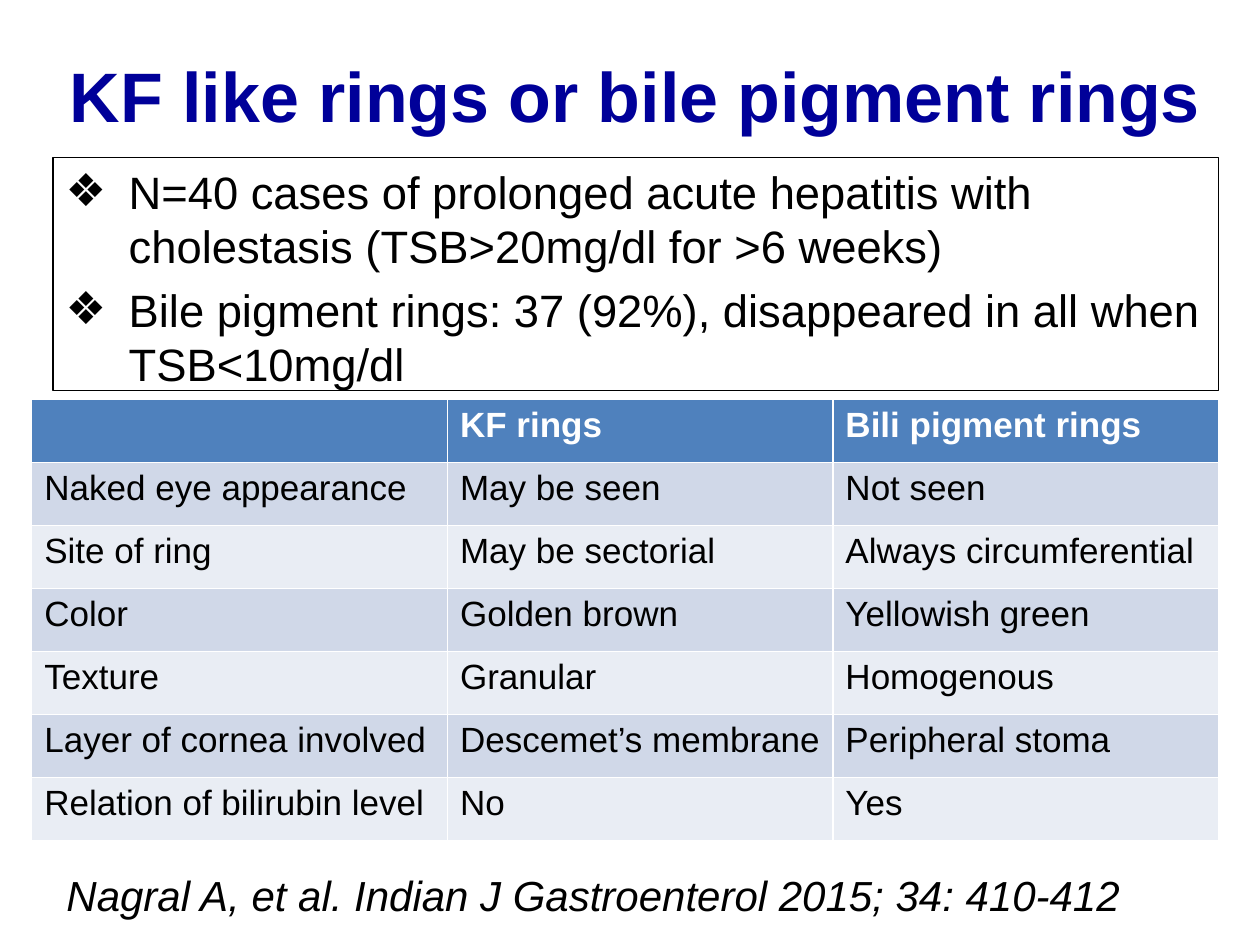
from dataclasses import dataclass

from lxml import etree
from pptx import Presentation, util as u
from pptx.dml.color import RGBColor
from pptx.enum import text as t
from pptx.oxml.ns import qn

FONT = "Arial"
BLACK, WHITE, NAVY = "000000", "FFFFFF", "000099"
HEADER_FILL, BAND_FILLS = "4F81BD", ("D0D8E8", "E9EDF4")


@dataclass
class Box:
    left: float
    top: float
    width: float
    height: float

    def lengths(self) -> list:
        return [u.Cm(v) for v in (self.left, self.top, self.width, self.height)]


@dataclass
class Style:
    size: float
    color: str = BLACK
    bold: bool = False
    italic: bool = False


TITLE_BOX = Box(0.84, 0.43, 23.93, 2.97)
FINDINGS_BOX = Box(1.07, 3.18, 23.5, 4.7)
TABLE_BOX = Box(0.64, 8.05, 23.92, 8.89)
CITATION_BOX = Box(1.09, 17.4, 22.43, 1.27)
COLUMN_WIDTHS = (8.38, 7.77, 7.77)

FINDINGS = (
    "N=40 cases of prolonged acute hepatitis with cholestasis (TSB>20mg/dl for >6 weeks)",
    "Bile pigment rings: 37 (92%), disappeared in all when TSB<10mg/dl",
)
COMPARISON = (
    ("", "KF rings", "Bili pigment rings"),
    ("Naked eye appearance", "May be seen", "Not seen"),
    ("Site of ring", "May be sectorial", "Always circumferential"),
    ("Color", "Golden brown", "Yellowish green"),
    ("Texture", "Granular", "Homogenous"),
    ("Layer of cornea involved", "Descemet’s membrane", "Peripheral stoma"),
    ("Relation of bilirubin level", "No", "Yes"),
)


def rgb(value: str) -> RGBColor:
    return RGBColor.from_string(value)


def format_text(frame, style: Style, align=t.PP_ALIGN.LEFT) -> None:
    for paragraph in frame.paragraphs:
        paragraph.alignment = align
        for run in paragraph.runs:
            run.font.name = FONT
            run.font.size = u.Pt(style.size)
            run.font.bold = style.bold
            run.font.italic = style.italic
            run.font.color.rgb = rgb(style.color)


def place(shape, box: Box) -> None:
    shape.left, shape.top, shape.width, shape.height = box.lengths()


def add_bullet(paragraph, symbol: str, indent: float) -> None:
    props = paragraph._p.get_or_add_pPr()
    props.set("marL", str(u.Cm(indent)))
    props.set("indent", str(-u.Cm(indent)))
    etree.SubElement(props, qn("a:buFont"), typeface=FONT)
    etree.SubElement(props, qn("a:buChar"), char=symbol)


def add_comparison(slide) -> None:
    table = slide.shapes.add_table(
        len(COMPARISON), len(COLUMN_WIDTHS), *TABLE_BOX.lengths()).table
    for column, width in zip(table.columns, COLUMN_WIDTHS):
        column.width = u.Cm(width)
    for r, entries in enumerate(COMPARISON):
        header = r == 0
        fill = HEADER_FILL if header else BAND_FILLS[(r - 1) % 2]
        style = Style(20, WHITE if header else BLACK, bold=header)
        for c, entry in enumerate(entries):
            cell = table.cell(r, c)
            cell.fill.solid()
            cell.fill.fore_color.rgb = rgb(fill)
            cell.text_frame.text = entry
            format_text(cell.text_frame, style)


def main() -> None:
    prs = Presentation()
    prs.slide_width, prs.slide_height = u.Cm(25.4), u.Cm(19.05)
    slide = prs.slides.add_slide(prs.slide_layouts[0])

    # Title
    title = slide.shapes.title
    place(title, TITLE_BOX)
    title.text_frame.text = "KF like rings or bile pigment rings"
    title.text_frame.vertical_anchor = t.MSO_ANCHOR.MIDDLE
    format_text(title.text_frame, Style(40, NAVY, bold=True), t.PP_ALIGN.CENTER)

    # Framed study findings
    findings = slide.placeholders[1]
    place(findings, FINDINGS_BOX)
    findings.line.color.rgb = rgb(BLACK)
    findings.line.width = u.Pt(0.75)
    findings.text_frame.text = "\n".join(FINDINGS)
    findings.text_frame.auto_size = t.MSO_AUTO_SIZE.NONE
    format_text(findings.text_frame, Style(25.9))
    for paragraph in findings.text_frame.paragraphs:
        add_bullet(paragraph, "❖", 1.27)

    # Comparison table
    add_comparison(slide)

    # Citation
    citation = slide.shapes.add_textbox(*CITATION_BOX.lengths())
    citation.text_frame.word_wrap = True
    citation.text_frame.text = "Nagral A, et al. Indian J Gastroenterol 2015; 34: 410-412"
    format_text(citation.text_frame, Style(24, italic=True))

    prs.save("out.pptx")


if __name__ == "__main__":
    main()
